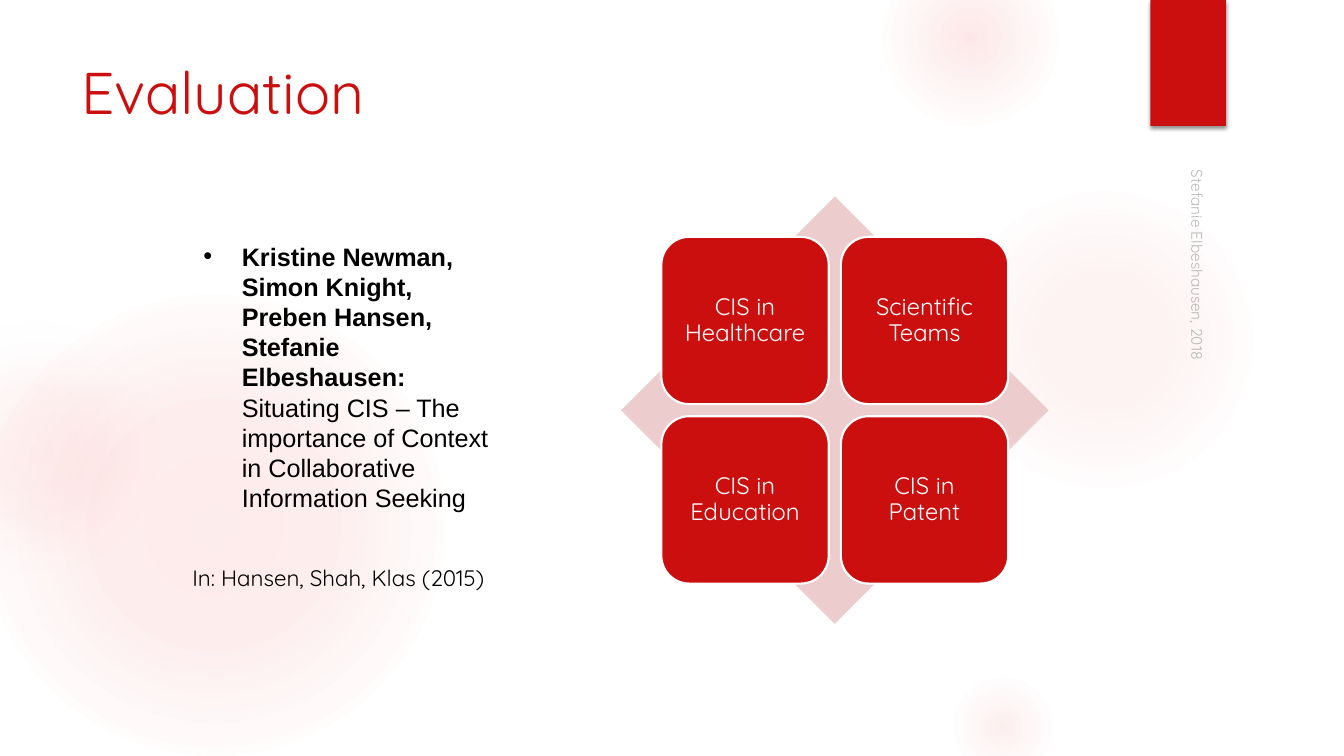
import pptx
import pptx.util
import pptx.dml.color
import pptx.enum.shapes
import pptx.enum.text
import pptx.oxml
import pptx.oxml.ns

Inches, Pt = pptx.util.Inches, pptx.util.Pt
Kind = pptx.enum.shapes.MSO_SHAPE
Align = pptx.enum.text.PP_ALIGN
Anchor = pptx.enum.text.MSO_ANCHOR

# Content
TITLE = "Evaluation"
NAMES = "Kristine Newman, Simon Knight, Preben Hansen, Stefanie Elbeshausen: "
PAPER = "Situating CIS – The importance of Context in Collaborative Information Seeking"
SOURCE = "In: Hansen, Shah, Klas (2015)"
FOOTER = "Stefanie Elbeshausen, 2018"
CARDS = ["CIS in Healthcare", "Scientific Teams", "CIS in Education", "CIS in Patent"]
COLORS = {"red": "CB0F0F", "pink": "ECCCCC", "glow": "F35C5C", "mist": "F3F3F3",
          "white": "FFFFFF", "black": "000000", "grey": "8C8C8C"}
FONT = "Quicksand"

# Glows: left, top, size, stops of (position %, colour, opacity %)
GLOWS = [
    (-0.17, 2.92, 4.58, [(0, "glow", 11), (36, "glow", 10), (75, "glow", 0)]),
    (-0.92, 3.17, 2.58, [(0, "glow", 8), (36, "glow", 5), (71, "mist", 0)]),
    (9.41, 1.83, 3.08, [(0, "glow", 7), (36, "glow", 6), (69, "glow", 0)]),
    (8.75, -0.5, 1.75, [(0, "glow", 14), (36, "glow", 7), (73, "glow", 0)]),
    (9.41, 6.67, 1.08, [(0, "glow", 10), (31, "glow", 5), (66, "glow", 0)]),
]

# Card grid
GRID_LEFT, GRID_TOP, CARD, PITCH = 6.56, 2.35, 1.66, 1.78

deck = pptx.Presentation()
deck.slide_width, deck.slide_height = Inches(13.33), Inches(7.5)
slide = deck.slides.add_slide(deck.slide_layouts[6])


def rgb(name):
    return pptx.dml.color.RGBColor.from_string(COLORS[name])


def parse(tag, attrs, body=""):
    space = pptx.oxml.ns.nsdecls("a")
    return pptx.oxml.parse_xml(f"<a:{tag} {space} {attrs}>{body}</a:{tag}>")


def tint(name, alpha):
    return f'<a:srgbClr val="{COLORS[name]}"><a:alpha val="{alpha * 1000}"/></a:srgbClr>'


def shape(kind, left, top, width, height, fill):
    item = slide.shapes.add_shape(kind, *map(Inches, (left, top, width, height)))
    item.shadow.inherit = False
    item.fill.solid()
    item.fill.fore_color.rgb = rgb(fill)
    item.line.fill.background()
    return item


def style(run, size, color, font=FONT, bold=False):
    run.font.size, run.font.name, run.font.bold = Pt(size), font, bold
    run.font.color.rgb = rgb(color)


def label(text, left, top, width, height, size, color):
    box = slide.shapes.add_textbox(*map(Inches, (left, top, width, height)))
    box.text_frame.word_wrap = True
    box.text_frame.text = text
    style(box.text_frame.paragraphs[0].runs[0], size, color)
    return box


# Soft background glows
for left, top, size, stops in GLOWS:
    glow = shape(Kind.OVAL, left, top, size, size, "glow")
    marks = "".join(f'<a:gs pos="{pos * 1000}">{tint(name, alpha)}</a:gs>'
                    for pos, name, alpha in stops)
    blend = parse("gradFill", 'rotWithShape="1"',
                  f'<a:gsLst>{marks}</a:gsLst><a:path path="circle">'
                  '<a:fillToRect l="50000" t="50000" r="50000" b="50000"/></a:path>')
    props = glow.element.spPr
    props.replace(props.find(pptx.oxml.ns.qn("a:solidFill")), blend)

# Red tab with its shadow
tab = shape(Kind.RECTANGLE, 11.41, 0, 0.75, 1.25, "red")
effect = tab.element.spPr.find(pptx.oxml.ns.qn("a:effectLst"))
effect.append(parse("outerShdw",
                    f'blurRad="{Pt(3)}" dist="{Pt(2)}" dir="5400000" rotWithShape="0"',
                    tint("black", 45)))

# Title
label(TITLE, 0.71, 0.5, 10.29, 1.53, 42, "red")

# Bulleted reference
cite = label(NAMES, 1.92, 2.34, 3.07, 3.97, 18, "black")
para = cite.text_frame.paragraphs[0]
props = para._p.get_or_add_pPr()
props.set("marL", str(Inches(0.38)))
props.set("indent", str(Inches(-0.38)))
props.append(parse("buFont", 'typeface="Arial"'))
props.append(parse("buChar", 'char="•"'))
para.add_run().text = PAPER
for run, bold in zip(para.runs, (True, False)):
    style(run, 18, "black", "Arial", bold)

# Diamond and cards
shape(Kind.DIAMOND, 6.16, 1.95, 4.24, 4.24, "pink")
for i, text in enumerate(CARDS):
    row, col = divmod(i, 2)
    card = shape(Kind.ROUNDED_RECTANGLE, GRID_LEFT + col * PITCH,
                 GRID_TOP + row * PITCH, CARD, CARD, "red")
    card.line.color.rgb = rgb("white")
    card.line.width = Pt(1.5)
    frame = card.text_frame
    frame.word_wrap = True
    frame.vertical_anchor = Anchor.MIDDLE
    frame.margin_left = frame.margin_right = Inches(0.07)
    frame.margin_top = frame.margin_bottom = Inches(0.07)
    frame.text = text
    para = frame.paragraphs[0]
    para.alignment, para.line_spacing = Align.CENTER, 0.9
    style(para.runs[0], 17, "white")

# Source line and rotated footer
label(SOURCE, 1.81, 5.55, 3.31, 0.37, 16, "black")
foot = label(FOOTER, 9.79, 3.53, 4.22, 0.33, 11, "grey")
foot.rotation = 90
foot.text_frame.vertical_anchor = Anchor.BOTTOM
ink = foot.element.find(".//" + pptx.oxml.ns.qn("a:srgbClr"))
ink.append(parse("alpha", 'val="60000"'))

deck.save("out.pptx")
